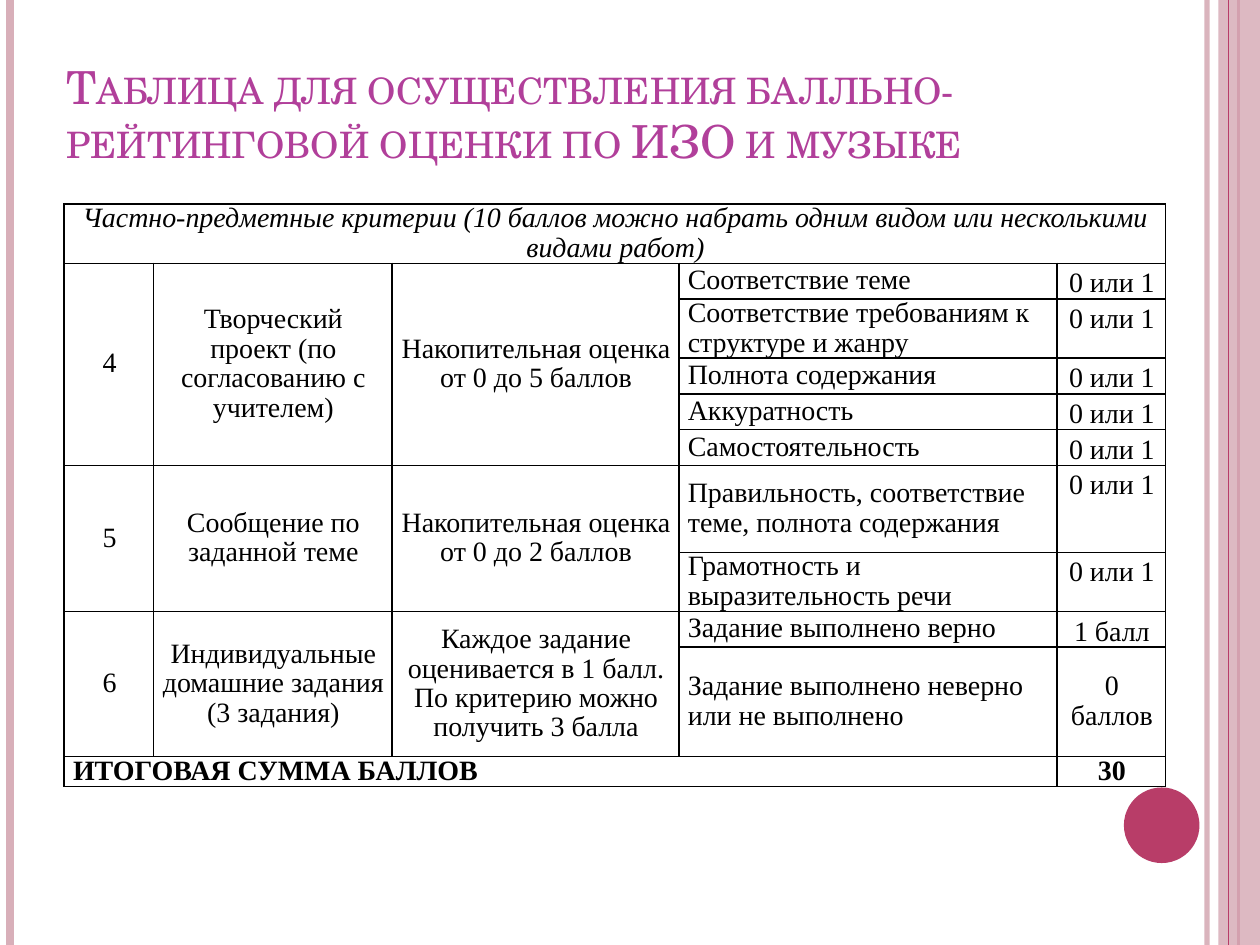
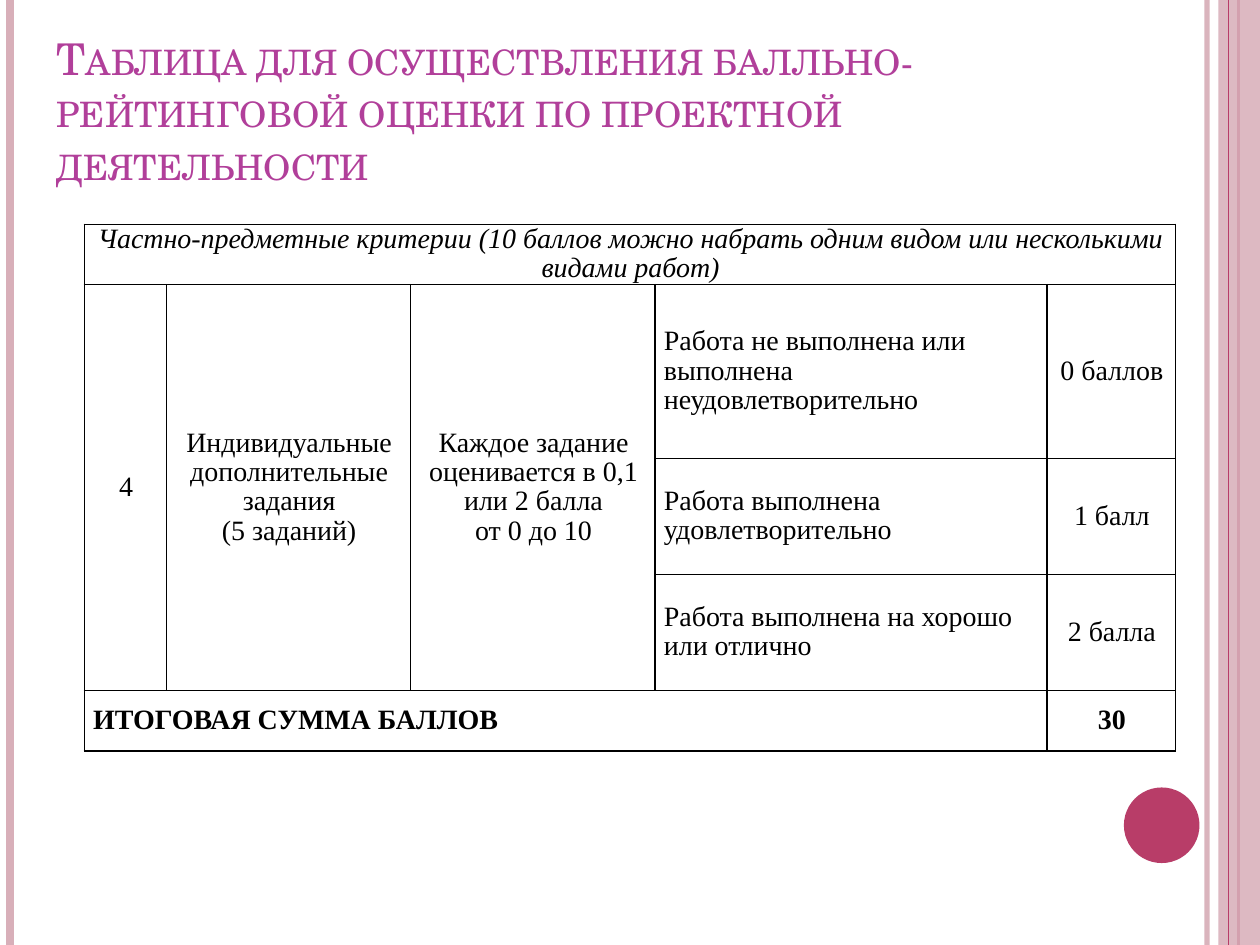
"""Build two slides with score tables for school subjects."""
from dataclasses import dataclass

from lxml import etree
from pptx import Presentation
from pptx import util as u
from pptx.dml.color import RGBColor
from pptx.enum import shapes, text
from pptx.oxml.ns import qn


@dataclass(frozen=True)
class Theme:
    """Colours, fonts and sizes shared by the slides."""
    rose: str = "D8AFB9"
    berry: str = "B83D68"
    violet: str = "B13F9A"
    ink: str = "000000"
    serif: str = "TeX Gyre Schola"
    body: str = "Times New Roman"
    size: int = 16
    rule: float = 1
    tight: float = 16.85
    loose: float = 20.4


THEME = Theme()
LEFT, MID = text.PP_ALIGN.LEFT, text.PP_ALIGN.CENTER
TOP, CORE, BASE = (text.MSO_ANCHOR.TOP, text.MSO_ANCHOR.MIDDLE,
                   text.MSO_ANCHOR.BOTTOM)
HEAD = ("Частно-предметные критерии (10 баллов можно набрать "
        "одним видом или несколькими видами работ)")
SUM = ("ИТОГОВАЯ СУММА БАЛЛОВ", "30")
MARK = "0 или 1"

ARTS = [
    ("4", "Творческий проект (по согласованию с учителем)",
     "Накопительная оценка\nот 0 до 5 баллов",
     [("Соответствие теме", MARK),
      ("Соответствие требованиям к структуре и жанру", MARK),
      ("Полнота содержания", MARK),
      ("Аккуратность", MARK),
      ("Самостоятельность", MARK)]),
    ("5", "Сообщение по заданной теме",
     "Накопительная оценка\nот 0 до 2 баллов",
     [("Правильность, соответствие теме, полнота содержания", MARK),
      ("Грамотность и выразительность речи", MARK)]),
    ("6", "Индивидуальные домашние задания (3 задания)",
     "Каждое задание оценивается в 1 балл. "
     "По критерию можно получить 3 балла",
     [("Задание выполнено верно", "1 балл"),
      ("Задание выполнено неверно или не выполнено", "0 баллов")]),
]
TASKS = [
    ("4", "Индивидуальные дополнительные задания\n(5 заданий)",
     "Каждое задание оценивается в 0,1 или 2 балла\nот 0 до 10",
     [("Работа не выполнена или выполнена неудовлетворительно", "0 баллов"),
      ("Работа выполнена удовлетворительно", "1 балл"),
      ("Работа выполнена на хорошо или отлично", "2 балла")]),
]


def put(item, form):
    """Set each attribute of an item from a dict."""
    for name, value in form.items():
        setattr(item, name, value)


def tint(fill, color, alpha=100):
    """Give a solid fill its colour and opacity in percent."""
    fill.solid()
    fill.fore_color.rgb = RGBColor.from_string(color)
    if alpha < 100:
        node = fill.fore_color._xFill[0]
        etree.SubElement(node, qn("a:alpha"), val=str(alpha * 1000))


def style(frame, face, para):
    """Apply font and paragraph values to all text of a frame."""
    for line in frame.paragraphs:
        put(line, para)
        for run in line.runs:
            put(run.font, face)
            run.font.color.rgb = RGBColor.from_string(THEME.ink)


def stripe(slide, x, color, width, alpha=100):
    """Draw a full-height vertical line."""
    line = slide.shapes.add_connector(
        shapes.MSO_CONNECTOR.STRAIGHT,
        u.Inches(x), 0, u.Inches(x), u.Inches(7.5))
    line.line.width = u.Pt(width)
    tint(line.line.fill, color, alpha)
    etree.SubElement(line._element.spPr, qn("a:effectLst"))


def block(slide, kind, box, color, alpha=100):
    """Draw a filled shape with no outline."""
    shape = slide.shapes.add_shape(kind, *map(u.Inches, box))
    shape.shadow.inherit = False
    tint(shape.fill, color, alpha)
    shape.line.fill.background()


def frame(slide):
    """Draw the side bands and the corner disc."""
    stripe(slide, 9.58, THEME.rose, 3, 93)
    stripe(slide, 0.08, THEME.rose, 4.5)
    stripe(slide, 9.83, THEME.berry, 1.5)
    block(slide, shapes.MSO_SHAPE.RECTANGLE, (9.67, 0, 0.33, 7.5),
          THEME.rose, 87)
    stripe(slide, 9.75, THEME.berry, 0.75)
    block(slide, shapes.MSO_SHAPE.OVAL, (8.92, 6.25, 0.6, 0.6), THEME.berry)


def title(slide, words, box, size):
    """Write the title in small capitals."""
    area = slide.shapes.add_textbox(*map(u.Inches, box)).text_frame
    put(area, {"word_wrap": True, "vertical_anchor": BASE, "text": words})
    font = area.paragraphs[0].runs[0].font
    put(font, {"name": THEME.serif, "size": u.Pt(size)})
    font.color.rgb = RGBColor.from_string(THEME.violet)
    font._element.set("cap", "small")


def edge(cell):
    """Draw the four borders of a cell."""
    props = cell._tc.get_or_add_tcPr()
    for spot, side in enumerate(("lnL", "lnR", "lnT", "lnB")):
        line = etree.Element(qn("a:" + side), w=str(u.Pt(THEME.rule)))
        fill = etree.SubElement(line, qn("a:solidFill"))
        etree.SubElement(fill, qn("a:srgbClr"), val=THEME.ink)
        props.insert(spot, line)


def write(cell, words, align=MID, loose=False, **face):
    """Write styled text into a cell."""
    cell.text = words
    cell.vertical_anchor = TOP if loose else CORE
    style(cell.text_frame,
          {"name": THEME.body, "size": u.Pt(THEME.size), **face},
          {"alignment": align,
           "line_spacing": u.Pt(THEME.loose if loose else THEME.tight)})


def grid(slide, spot, cols, rows):
    """Add a plain ruled table with the given column and row sizes."""
    size = (sum(cols), sum(rows))
    table = slide.shapes.add_table(
        len(rows), len(cols), *map(u.Inches, spot + size)).table
    put(table, {"first_row": False, "horz_banding": False})
    for col, width in zip(table.columns, cols):
        col.width = u.Inches(width)
    for row, height in zip(table.rows, rows):
        row.height = u.Inches(height)
    pad = {"margin_left": u.Inches(0.07), "margin_right": u.Inches(0.06),
           "margin_top": 0, "margin_bottom": 0}
    for cell in table.iter_cells():
        put(cell, pad)
        cell.fill.background()
        style(cell.text_frame, {}, {"line_spacing": u.Pt(THEME.tight)})
        edge(cell)
    return table


def scores(table, groups, loose=()):
    """Fill a table with heading, groups of criteria and total."""
    table.cell(0, 0).merge(table.cell(0, 4))
    write(table.cell(0, 0), HEAD, italic=True)
    row = 1
    for *lead, items in groups:
        for col, words in enumerate(lead):
            table.cell(row, col).merge(table.cell(row + len(items) - 1, col))
            write(table.cell(row, col), words)
        for goal, mark in items:
            write(table.cell(row, 3), goal, LEFT)
            write(table.cell(row, 4), mark, loose=row in loose)
            row += 1
    table.cell(row, 0).merge(table.cell(row, 3))
    write(table.cell(row, 0), SUM[0], LEFT, bold=True)
    write(table.cell(row, 4), SUM[1], bold=True)


def main():
    """Build and save the slides."""
    deck = Presentation()
    put(deck, {"slide_width": u.Inches(10), "slide_height": u.Inches(7.5)})
    lead = "Таблица для осуществления балльно-рейтинговой оценки по "
    pages = [
        ("ИЗО и музыке", (0.43, 0.13, 8.75, 1.25), 26, (0.51, 1.62),
         (0.71, 1.89, 2.28, 3, 0.86),
         (0.47, 0.28, 0.47, 0.28, 0.28, 0.28, 0.69, 0.47, 0.28, 0.87, 0.23),
         ARTS, range(1, 9)),
        ("проектной деятельности", (0.35, 0.3, 8.98, 1.25), 25, (0.67, 1.78),
         (0.65, 1.94, 1.94, 3.11, 1.02), (0.48, 1.38, 0.92, 0.92, 0.48),
         TASKS, ()),
    ]
    for topic, box, size, spot, cols, rows, groups, loose in pages:
        slide = deck.slides.add_slide(deck.slide_layouts[6])
        frame(slide)
        title(slide, lead + topic, box, size)
        scores(grid(slide, spot, cols, rows), groups, loose)
    deck.save("out.pptx")


if __name__ == "__main__":
    main()
